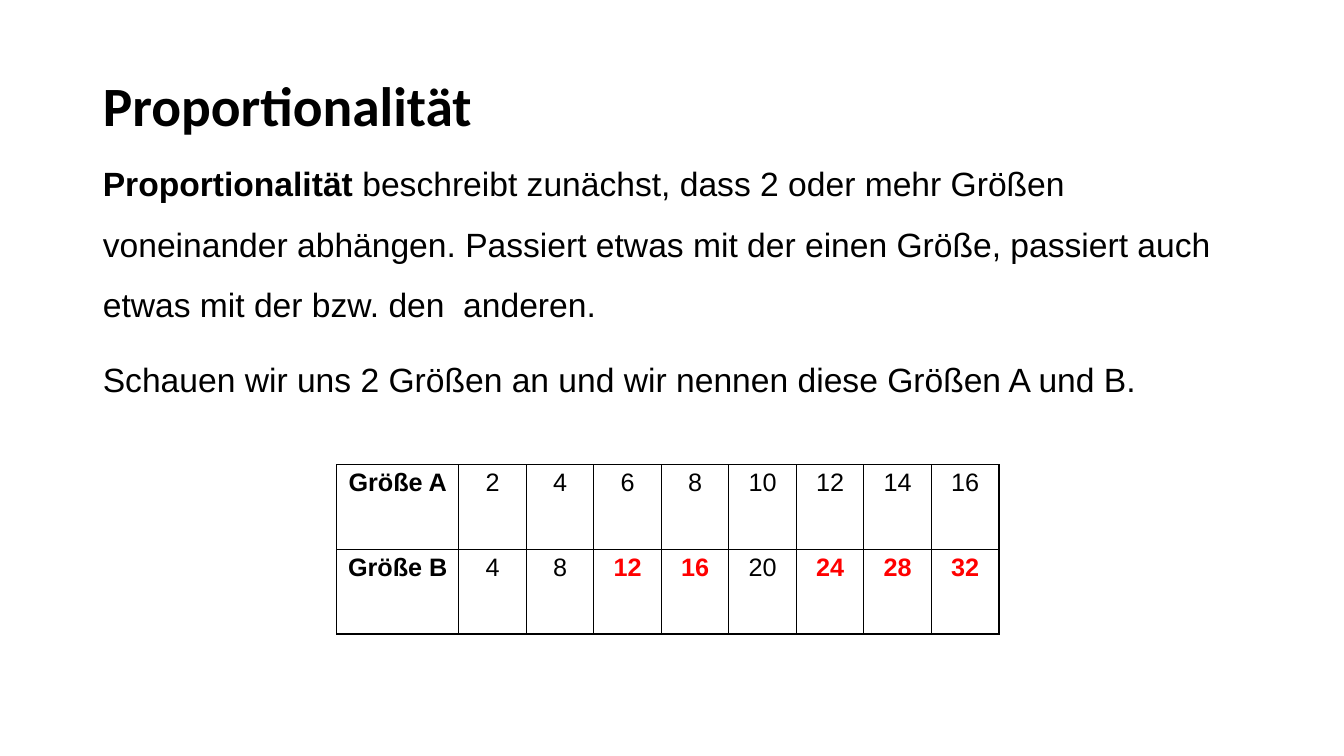
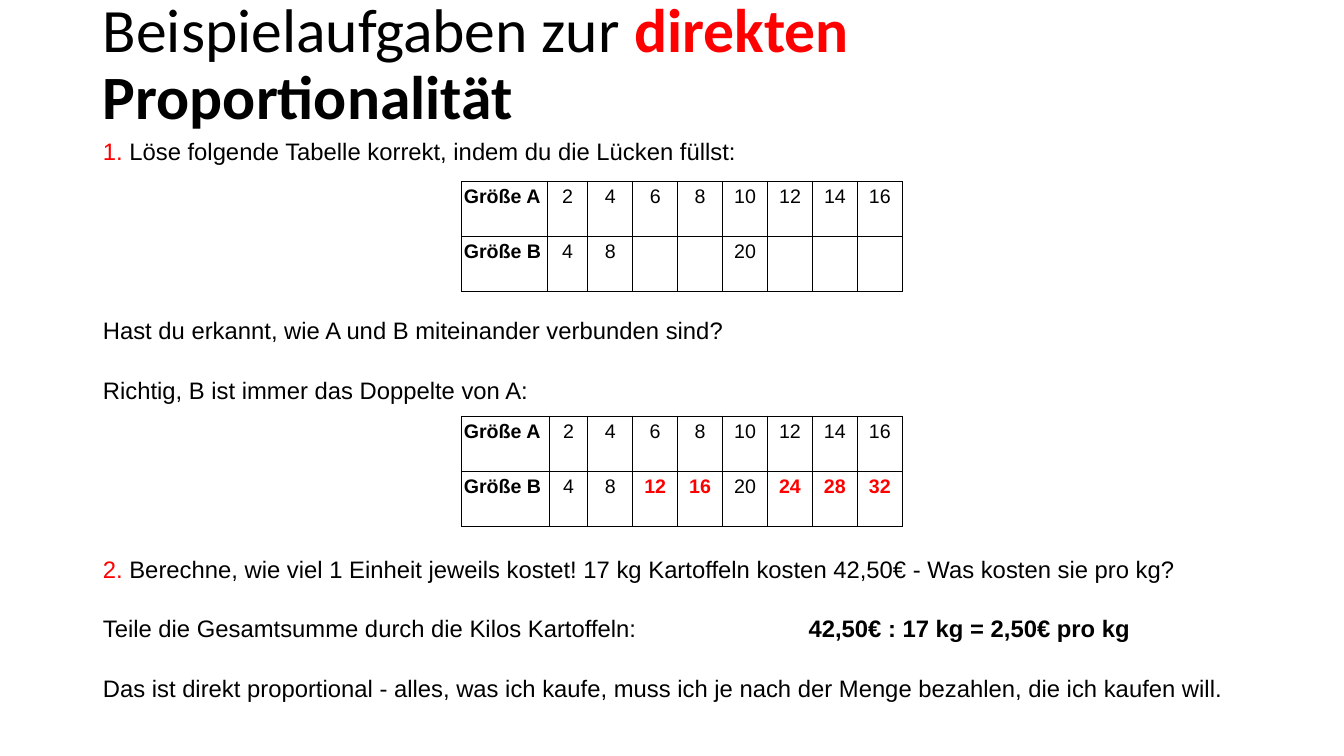
from collections import namedtuple
from dataclasses import dataclass

from lxml import etree
from pptx import Presentation
from pptx.dml.color import RGBColor
from pptx.enum.text import MSO_ANCHOR, MSO_AUTO_SIZE, PP_ALIGN
from pptx.oxml.ns import qn
from pptx.util import Inches, Pt

LEFT, CENTER = PP_ALIGN.LEFT, PP_ALIGN.CENTER
MIDDLE, BOTTOM, TOP = MSO_ANCHOR.MIDDLE, MSO_ANCHOR.BOTTOM, MSO_ANCHOR.TOP
NO_AUTOFIT = MSO_AUTO_SIZE.NONE
TITLE_AND_CONTENT = 1

Box = namedtuple("Box", "left top width height")
Run = namedtuple("Run", "text bold accent", defaults=(False, False))
Line = namedtuple("Line", "runs space_before spacing", defaults=(10, None))


@dataclass(frozen=True)
class Theme:
    text: RGBColor = RGBColor(0, 0, 0)
    accent: RGBColor = RGBColor(255, 0, 0)
    paper: RGBColor = RGBColor(255, 255, 255)
    title_font: str = "Calibri"
    body_font: str = "Arial"
    title_size: float = 39.6
    task_title_size: float = 44
    body_size: float = 24
    task_body_size: float = 17
    table_size: float = 18
    task_table_size: float = 14
    border_width: float = 1


THEME = Theme()
MARGIN, CONTENT_WIDTH = 0.92, 11.5
ANSWER_TAB = 7
TABLE_GAP = 95
SIZES_A = range(2, 17, 2)
FACTOR = 2
GIVEN = {2, 4, 10}


def add_runs(paragraph, runs, font_name, size):
    for part in runs:
        run = paragraph.add_run()
        run.text = part.text
        font = run.font
        font.name, font.size, font.bold = font_name, Pt(size), part.bold
        font.color.rgb = THEME.accent if part.accent else THEME.text


def place(shape, box, anchor):
    shape.left, shape.top, shape.width, shape.height = map(Inches, box)
    frame = shape.text_frame
    frame.word_wrap = True
    frame.auto_size = NO_AUTOFIT
    frame.vertical_anchor = anchor
    return frame


def fill_title(slide, box, runs, size, anchor):
    frame = place(slide.shapes.title, box, anchor)
    frame.margin_top = frame.margin_bottom = 0
    paragraph = frame.paragraphs[0]
    paragraph.alignment = LEFT
    paragraph.line_spacing = 0.9
    add_runs(paragraph, runs, THEME.title_font, size)


def set_plain_list(paragraph, tab):
    """Remove bullet and indent, and set the tab distance."""
    properties = paragraph._p.get_or_add_pPr()
    properties.set("marL", "0")
    properties.set("indent", "0")
    properties.set("defTabSz", str(Inches(tab)))
    etree.SubElement(properties, qn("a:buNone"))


def fill_body(slide, box, lines, size, line_spacing, tab=1):
    frame = place(slide.placeholders[1], box, TOP)
    for index, line in enumerate(lines):
        paragraph = frame.add_paragraph() if index else frame.paragraphs[0]
        paragraph.alignment = LEFT
        paragraph.line_spacing = line.spacing or line_spacing
        paragraph.space_before = Pt(line.space_before)
        set_plain_list(paragraph, tab)
        add_runs(paragraph, line.runs, THEME.body_font, size)


def set_borders(cell):
    properties = cell._tc.get_or_add_tcPr()
    for index, side in enumerate(("lnL", "lnR", "lnT", "lnB")):
        border = etree.Element(qn(f"a:{side}"), w=str(Pt(THEME.border_width)))
        fill = etree.SubElement(border, qn("a:solidFill"))
        etree.SubElement(fill, qn("a:srgbClr"), val=str(THEME.text))
        properties.insert(index, border)


def fill_cell(cell, run, size, alignment):
    cell.margin_left = cell.margin_right = Inches(0.02)
    cell.margin_top = cell.margin_bottom = Inches(0.04)
    cell.fill.solid()
    cell.fill.fore_color.rgb = THEME.paper
    set_borders(cell)
    if run:
        paragraph = cell.text_frame.paragraphs[0]
        paragraph.alignment = alignment
        add_runs(paragraph, [run], THEME.body_font, size)


def size_rows(solved):
    """Return both table rows; unsolved values of B stay empty."""
    row_a = [Run("Größe A", bold=True)]
    row_b = [Run("Größe B", bold=True)]
    for value in SIZES_A:
        given = value in GIVEN
        row_a.append(Run(str(value)))
        answer = Run(str(FACTOR * value), bold=not given, accent=not given)
        row_b.append(answer if given or solved else None)
    return row_a, row_b


def add_size_table(slide, box, first_widths, size, solved=True, label_alignment=LEFT):
    """Add the table; columns after first_widths share the remaining width."""
    rows = size_rows(solved)
    column_count = len(SIZES_A) + 1
    equal_count = column_count - len(first_widths)
    equal_width = (box.width - sum(first_widths)) / equal_count
    widths = first_widths + [equal_width] * equal_count
    frame = slide.shapes.add_table(len(rows), column_count, *map(Inches, box))
    table = frame.table
    table.first_row = table.horz_banding = False
    for column, width in zip(table.columns, widths):
        column.width = Inches(width)
    for row_index, runs in enumerate(rows):
        table.rows[row_index].height = Inches(box.height / len(rows))
        for column_index, run in enumerate(runs):
            alignment = CENTER if column_index else label_alignment
            fill_cell(table.cell(row_index, column_index), run, size, alignment)


def add_content_slide(presentation):
    return presentation.slides.add_slide(presentation.slide_layouts[TITLE_AND_CONTENT])


def build_definition_slide(presentation):
    slide = add_content_slide(presentation)
    fill_title(slide, Box(MARGIN, 0.4, CONTENT_WIDTH, 0.97),
               [Run("Proportionalität", bold=True)], THEME.title_size, BOTTOM)
    lines = [
        Line([Run("Proportionalität ", bold=True),
              Run("beschreibt zunächst, dass 2 oder mehr Größen voneinander abhängen. "
                  "Passiert etwas mit der einen Größe, passiert auch etwas mit der "
                  "bzw. den  anderen.")]),
        Line([Run("Schauen wir uns 2 Größen an und wir nennen diese Größen A und B.")]),
    ]
    fill_body(slide, Box(MARGIN, 1.37, CONTENT_WIDTH, 5.39), lines, THEME.body_size, 1.5)
    add_size_table(slide, Box(3.34, 4.61, 6.57, 1.68), [1.21],
                   THEME.table_size, label_alignment=CENTER)


def build_task_slide(presentation):
    slide = add_content_slide(presentation)
    fill_title(slide, Box(MARGIN, 0, CONTENT_WIDTH, 1.31),
               [Run("Beispielaufgaben zur "), Run("direkten", bold=True, accent=True),
                Run(" Proportionalität", bold=True)], THEME.task_title_size, MIDDLE)
    lines = [
        Line([Run("1. ", accent=True),
              Run("Löse folgende Tabelle korrekt, indem du die Lücken füllst:")],
             space_before=0, spacing=1),
        Line([Run("Hast du erkannt, wie A und B miteinander verbunden sind?")], TABLE_GAP),
        Line([Run("Richtig, B ist immer das Doppelte von A:")]),
        Line([Run("2. ", accent=True),
              Run("Berechne, wie viel 1 Einheit jeweils kostet! 17 kg Kartoffeln "
                  "kosten 42,50€ - Was kosten sie pro kg?")], TABLE_GAP),
        Line([Run("Teile die Gesamtsumme durch die Kilos Kartoffeln:\t"),
              Run("42,50€ : 17 kg = 2,50€ pro kg", bold=True)]),
        Line([Run("Das ist direkt proportional - alles, was ich kaufe, muss ich je nach "
                  "der Menge bezahlen, die ich kaufen will.")]),
    ]
    fill_body(slide, Box(MARGIN, 1.31, CONTENT_WIDTH, 5.78), lines,
              THEME.task_body_size, 1.6, ANSWER_TAB)
    for top, first_widths, solved in ((1.8, [0.85, 0.4], False), (4.13, [0.87, 0.38], True)):
        add_size_table(slide, Box(4.58, top, 4.37, 1.09), first_widths,
                       THEME.task_table_size, solved)


def main():
    presentation = Presentation()
    presentation.slide_width, presentation.slide_height = Inches(13.33), Inches(7.5)
    build_definition_slide(presentation)
    build_task_slide(presentation)
    presentation.save("out.pptx")


if __name__ == "__main__":
    main()
